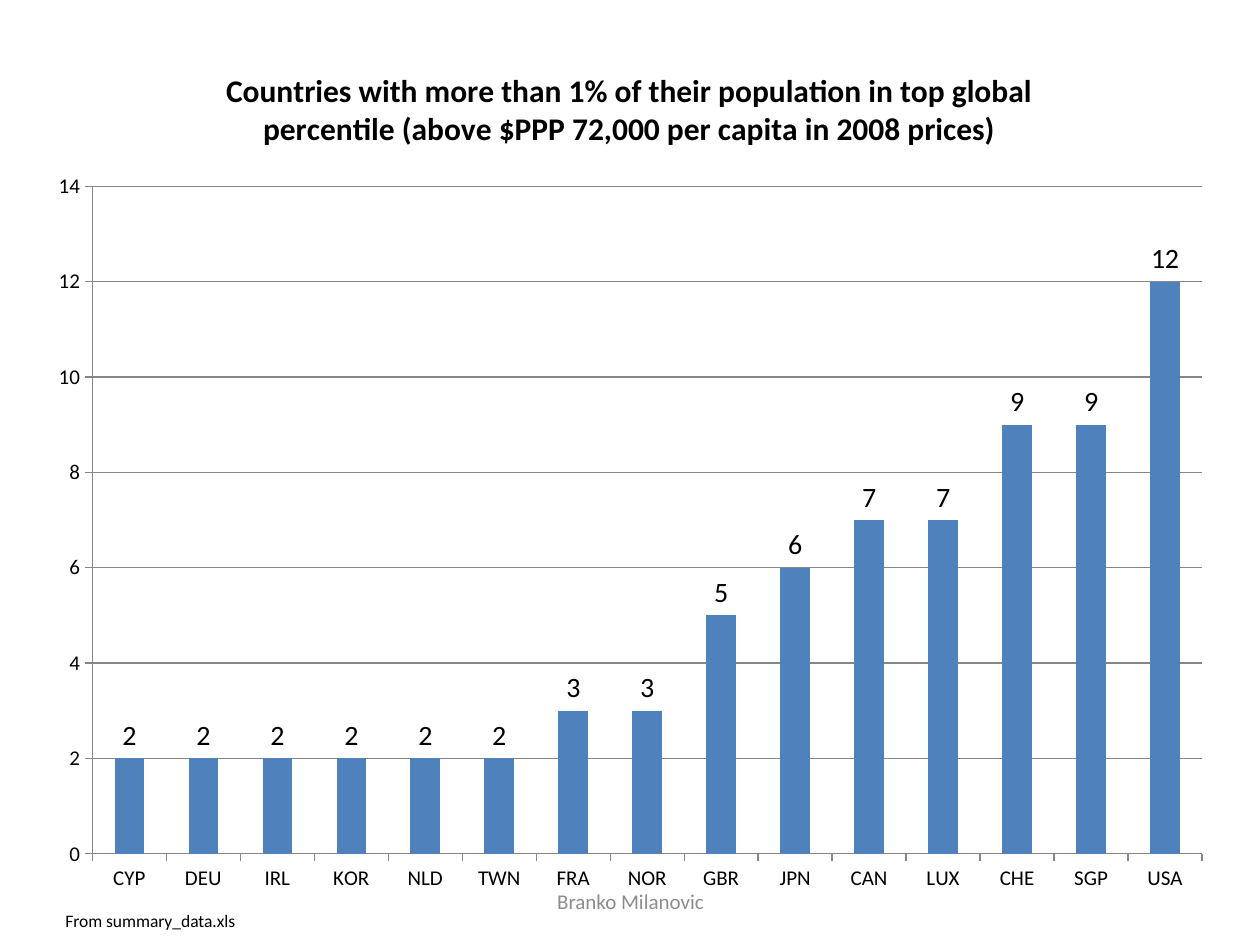
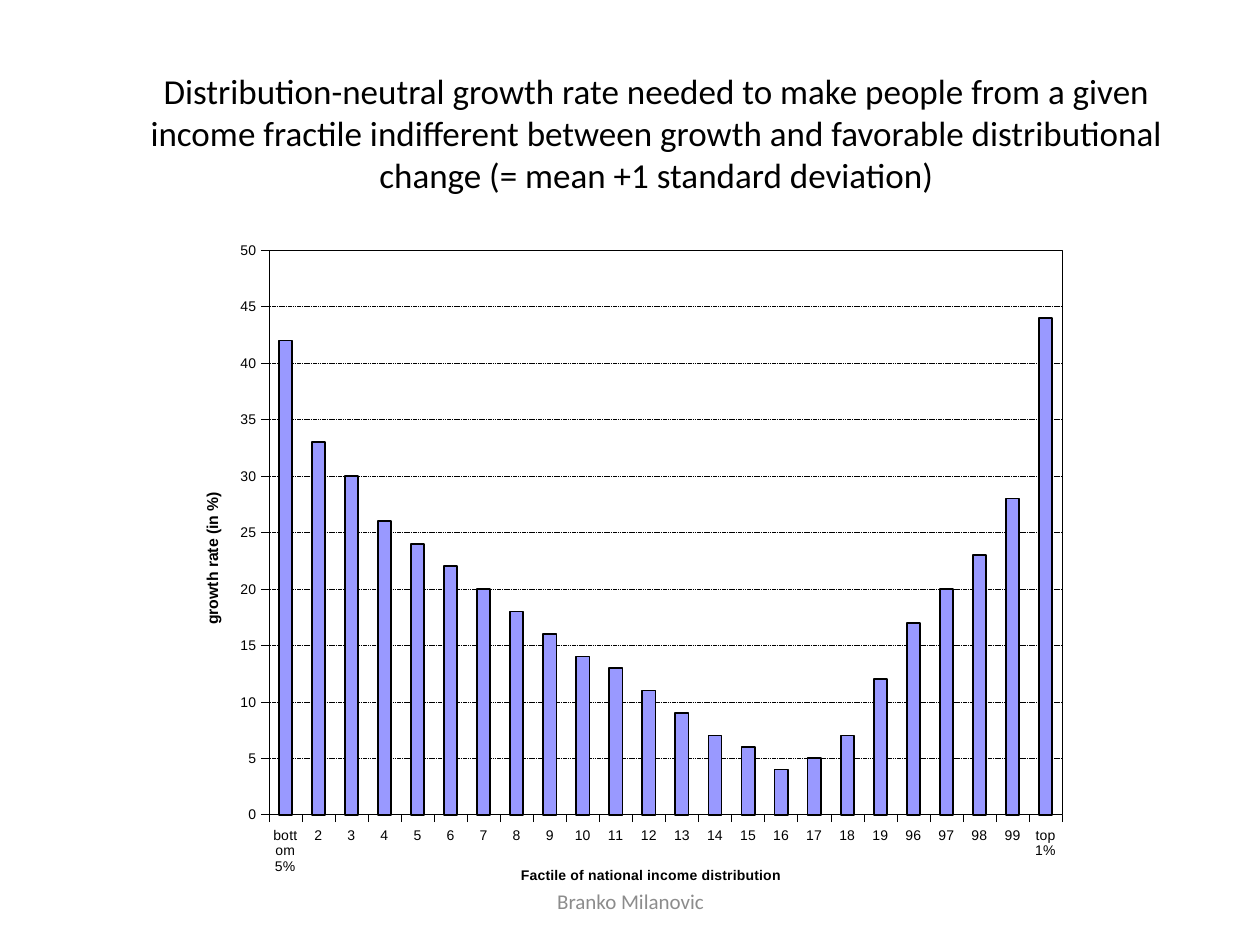
from dataclasses import dataclass

from lxml.etree import SubElement
from pptx import Presentation
from pptx.chart.data import CategoryChartData
from pptx.dml.color import RGBColor
from pptx.enum.chart import XL_CHART_TYPE, XL_LABEL_POSITION, XL_TICK_MARK
from pptx.enum.dml import MSO_LINE
from pptx.enum.text import MSO_ANCHOR, PP_ALIGN
from pptx.oxml import parse_xml
from pptx.oxml.ns import nsdecls, qn
from pptx.util import Inches, Pt


@dataclass(frozen=True)
class Theme:
    """Colours, fonts and type sizes of the presentation."""
    text: str = "000000"
    footer: str = "8C8C8C"
    axis: str = "868686"
    paper: str = "FFFFFF"
    country_bar: str = "4F81BD"
    fractile_bar: str = "9999FF"
    body_font: str = "Calibri"
    plain_font: str = "Arial"
    title_size: int = 20
    chart_title_size: int = 18
    label_size: int = 16
    body_size: int = 12
    note_size: int = 10
    axis_title_size: int = 9
    small_size: int = 8


@dataclass(frozen=True)
class ChartStyle:
    """Look of one column chart."""
    font: str
    size: int
    bar: str
    axis: str
    axis_width: float
    plot_area: tuple
    dash: object = None
    bar_line: bool = False


THEME = Theme()
TITLE_ONLY, BLANK = 5, 6
COLUMNS, ROWS = 100, 75


class Deck:
    """Holds the theme and the current slide and places elements on a grid."""

    def __init__(self, theme):
        self.theme = theme
        self.presentation = Presentation()
        self.presentation.slide_width = Inches(10)
        self.presentation.slide_height = Inches(7.5)
        self.slide = None

    def box(self, column, row, width, height):
        """Turn grid columns and rows into slide lengths."""
        across = self.presentation.slide_width / COLUMNS
        down = self.presentation.slide_height / ROWS
        return (round(column * across), round(row * down),
                round(width * across), round(height * down))

    def new_slide(self, layout):
        """Start a slide with the shared footer."""
        layouts = self.presentation.slide_layouts
        self.slide = self.presentation.slides.add_slide(layouts[layout])
        self.text((34.2, 69.5, 31.7, 4), "Branko Milanovic", self.theme.body_size,
                  self.theme.footer, PP_ALIGN.CENTER, MSO_ANCHOR.MIDDLE)

    def set_font(self, font, size, color=None, name=None, bold=False):
        """Apply one type style to a font."""
        font.size = Pt(size)
        font.bold = bold
        font.name = name or self.theme.body_font
        font.color.rgb = RGBColor.from_string(color or self.theme.text)

    def fill_text(self, text_frame, text, size, color=None, name=None, bold=False):
        """Set a text frame's wording and format its runs."""
        text_frame.text = text
        for paragraph in text_frame.paragraphs:
            for run in paragraph.runs:
                self.set_font(run.font, size, color, name, bold)

    def text(self, place, text, size, color=None, align=PP_ALIGN.LEFT,
             anchor=MSO_ANCHOR.TOP):
        """Add a wrapping text box."""
        shape = self.slide.shapes.add_textbox(*self.box(*place))
        shape.text_frame.word_wrap = True
        shape.text_frame.vertical_anchor = anchor
        self.fill_text(shape.text_frame, text, size, color)
        shape.text_frame.paragraphs[0].alignment = align

    def title(self, place, text):
        """Move and format the title placeholder."""
        shape = self.slide.shapes.title
        shape.left, shape.top, shape.width, shape.height = self.box(*place)
        shape.text_frame.vertical_anchor = MSO_ANCHOR.TOP
        self.fill_text(shape.text_frame, text, self.theme.title_size)
        shape.text_frame.paragraphs[0].alignment = PP_ALIGN.CENTER

    def set_line(self, line, color, width):
        """Give a line its colour and width."""
        line.color.rgb = RGBColor.from_string(color)
        line.width = Pt(width)

    def column_chart(self, place, categories, values, style, maximum, step):
        """Add a column chart with one series."""
        data = CategoryChartData()
        data.categories = categories
        data.add_series("Series 1", values)
        chart = self.slide.shapes.add_chart(
            XL_CHART_TYPE.COLUMN_CLUSTERED, *self.box(*place), data).chart
        chart.has_legend = False
        chart.has_title = False
        self.set_font(chart.font, style.size, name=style.font)
        plot = chart.plots[0]
        plot.gap_width = 150
        plot.vary_by_categories = False
        series = plot.series[0]
        series.format.fill.solid()
        series.format.fill.fore_color.rgb = RGBColor.from_string(style.bar)
        if style.bar_line:
            self.set_line(series.format.line, style.axis, 1)
        for axis in (chart.category_axis, chart.value_axis):
            axis.major_tick_mark = XL_TICK_MARK.OUTSIDE
            axis.minor_tick_mark = XL_TICK_MARK.NONE
            self.set_font(axis.tick_labels.font, style.size, name=style.font)
            self.set_line(axis.format.line, style.axis, style.axis_width)
        axis = chart.value_axis
        axis.minimum_scale, axis.maximum_scale, axis.major_unit = 0, maximum, step
        axis.has_major_gridlines = True
        grid_line = axis.major_gridlines.format.line
        self.set_line(grid_line, style.axis, style.axis_width)
        if style.dash:
            grid_line.dash_style = style.dash
        chart_part = chart.element.find(qn("c:chart"))
        chart_part.addnext(parse_xml(
            f'<c:spPr {nsdecls("c", "a")}><a:noFill/><a:ln><a:noFill/></a:ln></c:spPr>'))
        self.place_plot(chart_part.find(qn("c:plotArea")), style.plot_area)
        return chart

    def place_plot(self, plot_area, shares):
        """Fix the inner plot area as shares of the chart."""
        for layout in plot_area.findall(qn("c:layout")):
            plot_area.remove(layout)
        layout = parse_xml(f'<c:layout {nsdecls("c")}><c:manualLayout/></c:layout>')
        settings = [("layoutTarget", "inner"), ("xMode", "edge"), ("yMode", "edge")]
        settings += zip("xywh", shares)
        for tag, value in settings:
            SubElement(layout[0], qn(f"c:{tag}")).set("val", str(value))
        plot_area.insert(0, layout)

    def frame_plot(self, chart, color, width):
        """Fill the plot area and draw its border."""
        plot_area = chart.element.find(qn("c:chart")).find(qn("c:plotArea"))
        plot_area.append(parse_xml(
            f'<c:spPr {nsdecls("c", "a")}><a:solidFill><a:srgbClr val="{self.theme.paper}"/>'
            f'</a:solidFill><a:ln w="{Pt(width)}"><a:solidFill><a:srgbClr val="{color}"/>'
            f'</a:solidFill></a:ln></c:spPr>'))


def add_country_slide(deck):
    """Show the countries with many people in the top global percentile."""
    theme = deck.theme
    shares = {"CYP": 2, "DEU": 2, "IRL": 2, "KOR": 2, "NLD": 2, "TWN": 2, "FRA": 3,
              "NOR": 3, "GBR": 5, "JPN": 6, "CAN": 7, "LUX": 7, "CHE": 9, "SGP": 9,
              "USA": 12}
    style = ChartStyle(theme.body_font, theme.body_size, theme.country_bar, theme.axis,
                       0.75, (0.05, 0.17, 0.93, 0.77))
    deck.new_slide(BLANK)
    chart = deck.column_chart((2.6, 3.1, 94.7, 68.8), shares.keys(), shares.values(),
                              style, 14, 2)
    chart.has_title = True
    chart.chart_title.include_in_layout = False
    deck.fill_text(chart.chart_title.text_frame,
                   "Countries with more than 1% of their population in top global "
                   "percentile (above $PPP 72,000 per capita in 2008 prices)",
                   theme.chart_title_size, bold=True)
    plot = chart.plots[0]
    plot.has_data_labels = True
    plot.data_labels.show_value = True
    plot.data_labels.position = XL_LABEL_POSITION.OUTSIDE_END
    deck.set_font(plot.data_labels.font, theme.label_size)
    deck.text((4.2, 71.7, 30, 2.7), "From summary_data.xls", theme.note_size)


def add_growth_slide(deck):
    """Show the growth rate needed by each income fractile."""
    theme = deck.theme
    fractiles = ["bottom 5%", *map(str, range(2, 20)), *map(str, range(96, 100)), "top 1%"]
    rates = [42, 33, 30, 26, 24, 22, 20, 18, 16, 14, 13, 11,
             9, 7, 6, 4, 5, 7, 12, 17, 20, 23, 28, 44]
    style = ChartStyle(theme.plain_font, theme.small_size, theme.fractile_bar, theme.text,
                       0.25, (0.08, 0.03, 0.91, 0.86), MSO_LINE.SQUARE_DOT, True)
    deck.new_slide(TITLE_ONLY)
    chart = deck.column_chart((15.8, 18.3, 69.2, 52.1), fractiles, rates, style, 50, 5)
    deck.frame_plot(chart, theme.text, 0.25)
    chart.value_axis.tick_labels.number_format = "0"
    chart.value_axis.tick_labels.number_format_is_linked = False
    for axis, text, size in (
            (chart.category_axis, "Factile of national income distribution", theme.small_size),
            (chart.value_axis, "growth rate (in %)", theme.axis_title_size)):
        axis.has_title = True
        deck.fill_text(axis.axis_title.text_frame, text, size, name=style.font, bold=True)
    deck.title((7.5, 5, 89.2, 11.1),
               "Distribution-neutral growth rate needed to make people from a given "
               "income fractile indifferent between growth and favorable distributional "
               "change (= mean +1 standard deviation)")


def main():
    """Build and save the presentation."""
    deck = Deck(THEME)
    add_country_slide(deck)
    add_growth_slide(deck)
    deck.presentation.save("out.pptx")


if __name__ == "__main__":
    main()
